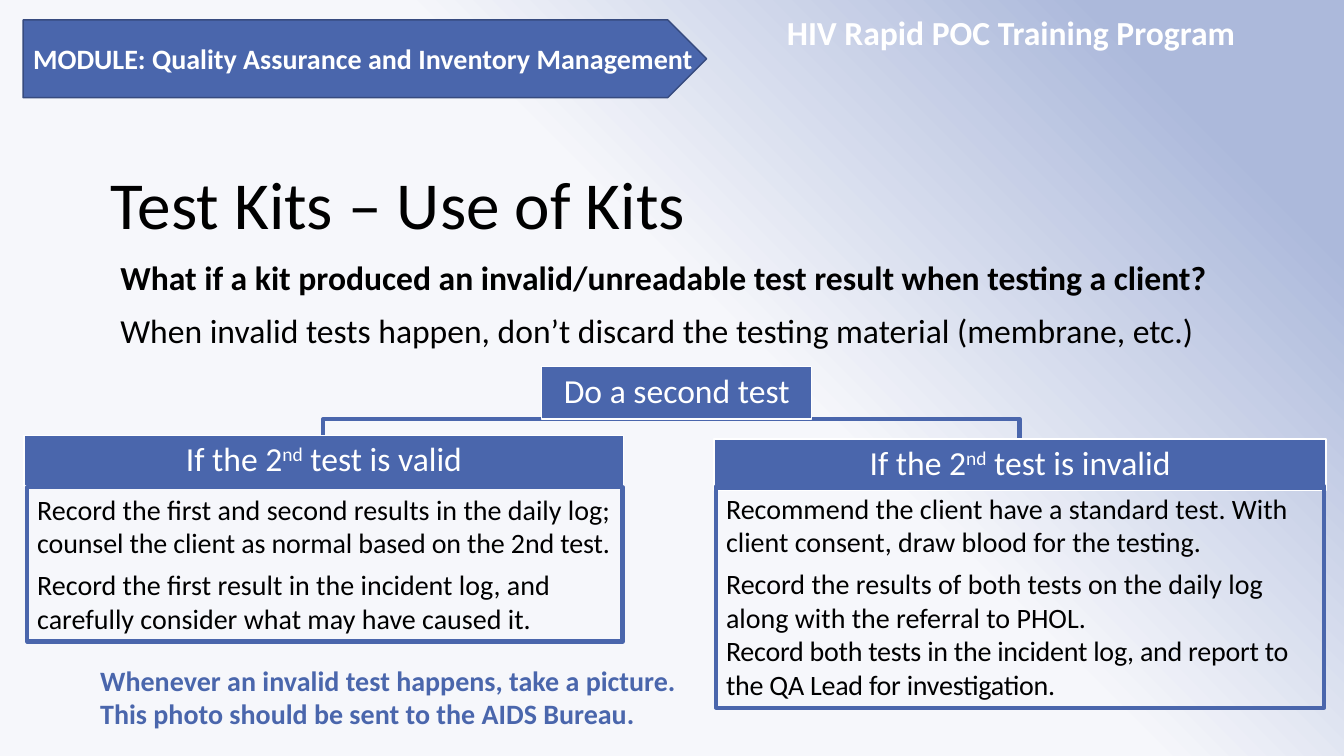
from dataclasses import dataclass

from lxml.etree import SubElement
from pptx import Presentation
from pptx.dml.color import RGBColor as RGB
from pptx.enum.shapes import MSO_SHAPE as SHAPE
from pptx.enum.text import MSO_ANCHOR as ANCHOR, MSO_AUTO_SIZE as FIT, PP_ALIGN as ALIGN
from pptx.oxml.ns import qn
from pptx.util import Pt

PX = 9525  # EMU per px, 96 px to the inch


@dataclass(frozen=True)
class Theme:
    font: str = "Calibri"
    blue: str = "4A66AC"
    navy: str = "374B7F"
    white: str = "FFFFFF"
    black: str = "000000"
    title: int = 48
    lead: int = 24
    detail: int = 20
    backdrop: tuple = ((55, "F6F7FB"), (88, "ACB9DB"), (100, "ACB9DB"), (100, "C8D1E7"))


THEME = Theme()
SUPERSCRIPT = {"baseline": "30000"}


def emu(*lengths):
    return [length * PX for length in lengths]


def apply(target, formats):
    for name, value in formats.items():
        setattr(target, name, value)


def paint_backdrop(slide):
    fill = slide.background.fill
    fill.gradient()
    fill.gradient_angle = 45
    stops = slide.element.find(".//" + qn("a:gsLst"))
    for stop in list(stops):
        stops.remove(stop)
    for percent, colour in THEME.backdrop:
        stop = SubElement(stops, qn("a:gs"), pos=str(percent * 1000))
        SubElement(stop, qn("a:srgbClr"), val=colour)


def write(shape, paragraphs, size, colour, bold=False, frame=None, **layout):
    """Fill a shape with paragraphs of (runs, formats); a run is (text, XML attributes)."""
    text = shape.text_frame
    apply(text, {"word_wrap": True, "auto_size": FIT.NONE,
                 "vertical_anchor": ANCHOR.TOP, **(frame or {})})
    for index, (runs, formats) in enumerate(paragraphs):
        paragraph = text.add_paragraph() if index else text.paragraphs[0]
        apply(paragraph, {"alignment": ALIGN.LEFT, "space_before": Pt(0), **layout, **formats})
        for words, attributes in runs:
            run = paragraph.add_run()
            run.text = words
            apply(run.font, {"name": THEME.font, "size": Pt(size), "bold": bold})
            run.font.color.rgb = RGB.from_string(colour)
            for name, value in attributes.items():
                run.font._element.set(name, value)


def plain(words, **formats):
    return [(words, {})], formats


def add_caption(slide, box, words, size, colour):
    write(slide.shapes.add_textbox(*emu(*box)), [plain(words)], size, colour, bold=True)


def fill_placeholder(placeholder, box, paragraphs, size, **options):
    apply(placeholder, dict(zip(("left", "top", "width", "height"), emu(*box))))
    write(placeholder, paragraphs, size, THEME.black, line_spacing=0.9, **options)


def style_outline(shape, line, width, fill=None):
    shape.shadow.inherit = False
    if fill:
        shape.fill.solid()
        shape.fill.fore_color.rgb = RGB.from_string(fill)
    else:
        shape.fill.background()
    shape.line.color.rgb = RGB.from_string(line)
    shape.line.width = Pt(width)


def add_step(slide, box, runs):
    step = slide.shapes.add_shape(SHAPE.RECTANGLE, *emu(*box))
    style_outline(step, THEME.white, 1, THEME.blue)
    margins = dict.fromkeys(
        ("margin_left", "margin_top", "margin_right", "margin_bottom"), 2 * PX)
    write(step, [(runs, {})], THEME.lead, THEME.white,
          frame={"vertical_anchor": ANCHOR.MIDDLE, **margins},
          alignment=ALIGN.CENTER, line_spacing=0.9)


def add_instructions(slide, box, paragraphs):
    panel = slide.shapes.add_shape(SHAPE.RECTANGLE, *emu(*box))
    style_outline(panel, THEME.blue, 3)
    write(panel, paragraphs, THEME.detail, THEME.black)


def add_branch(slide, parent, child):
    """Draw a line from the parent's bottom centre across and down to the child's top."""
    start_x, start_y = parent[0] + parent[2] // 2, parent[1] + parent[3]
    end_x, end_y = child[0] + child[2] // 2, child[1]
    builder = slide.shapes.build_freeform(start_x, start_y, scale=PX)
    builder.add_line_segments([(end_x, start_y), (end_x, end_y)], close=False)
    style_outline(builder.convert_to_shape(), THEME.blue, 3)


def main():
    deck = Presentation()
    deck.slide_width, deck.slide_height = emu(1280, 720)
    slide = deck.slides.add_slide(deck.slide_layouts[0])
    paint_backdrop(slide)
    title, question = slide.placeholders

    add_caption(slide, (740, 7, 540, 38), "HIV Rapid POC Training Program",
                THEME.lead, THEME.white)
    fill_placeholder(title, (96, 129, 1102, 108), [plain("Test Kits – Use of Kits")],
                     THEME.title, frame={"vertical_anchor": ANCHOR.BOTTOM})
    module = slide.shapes.add_shape(SHAPE.PENTAGON, *emu(22, 19, 651, 74))
    style_outline(module, THEME.navy, 1, THEME.blue)
    add_caption(slide, (22, 35, 665, 42),
                "MODULE: Quality Assurance and Inventory Management",
                THEME.detail, THEME.white)
    fill_placeholder(question, (105, 244, 1162, 299), [
        ([("What if a kit produced an invalid/unreadable test result when testing a client?",
           {"b": "1"})], {}),
        plain("When invalid tests happen, don’t discard the testing material (membrane, etc.)",
              space_before=Pt(12)),
    ], THEME.lead)

    second_test = (516, 349, 257, 50)
    outcomes = {"valid": (23, 415, 571, 48), "invalid": (680, 418, 583, 49)}
    for header in outcomes.values():
        add_branch(slide, second_test, header)
    add_step(slide, second_test, [("Do a second test", {})])
    for outcome, header in outcomes.items():
        add_step(slide, header,
                 [("If the 2", {}), ("nd", SUPERSCRIPT), (f" test is {outcome}", {})])

    add_instructions(slide, (26, 464, 567, 147), [
        ([("Record the first and second results in the daily log; ", {}),
          ("counsel the client as normal based on the 2nd test.", {"spc": "-10"})],
         {"space_after": Pt(6)}),
        plain("Record the first result in the incident log, and carefully consider "
              "what may have caused it."),
    ])
    add_instructions(slide, (682, 463, 579, 211), [
        plain("Recommend the client have a standard test. With client consent, "
              "draw blood for the testing.", space_after=Pt(6)),
        plain("Record the results of both tests on the daily log along with "
              "the referral to PHOL."),
        ([("Record both tests in the incident log, and report to the QA Lead "
           "for investigation.", {"spc": "-20"})], {}),
    ])
    add_caption(slide, (86, 627, 589, 74),
                "Whenever an invalid test happens, take a picture. "
                "This photo should be sent to the AIDS Bureau.",
                THEME.detail, THEME.blue)
    deck.save("out.pptx")


if __name__ == "__main__":
    main()
